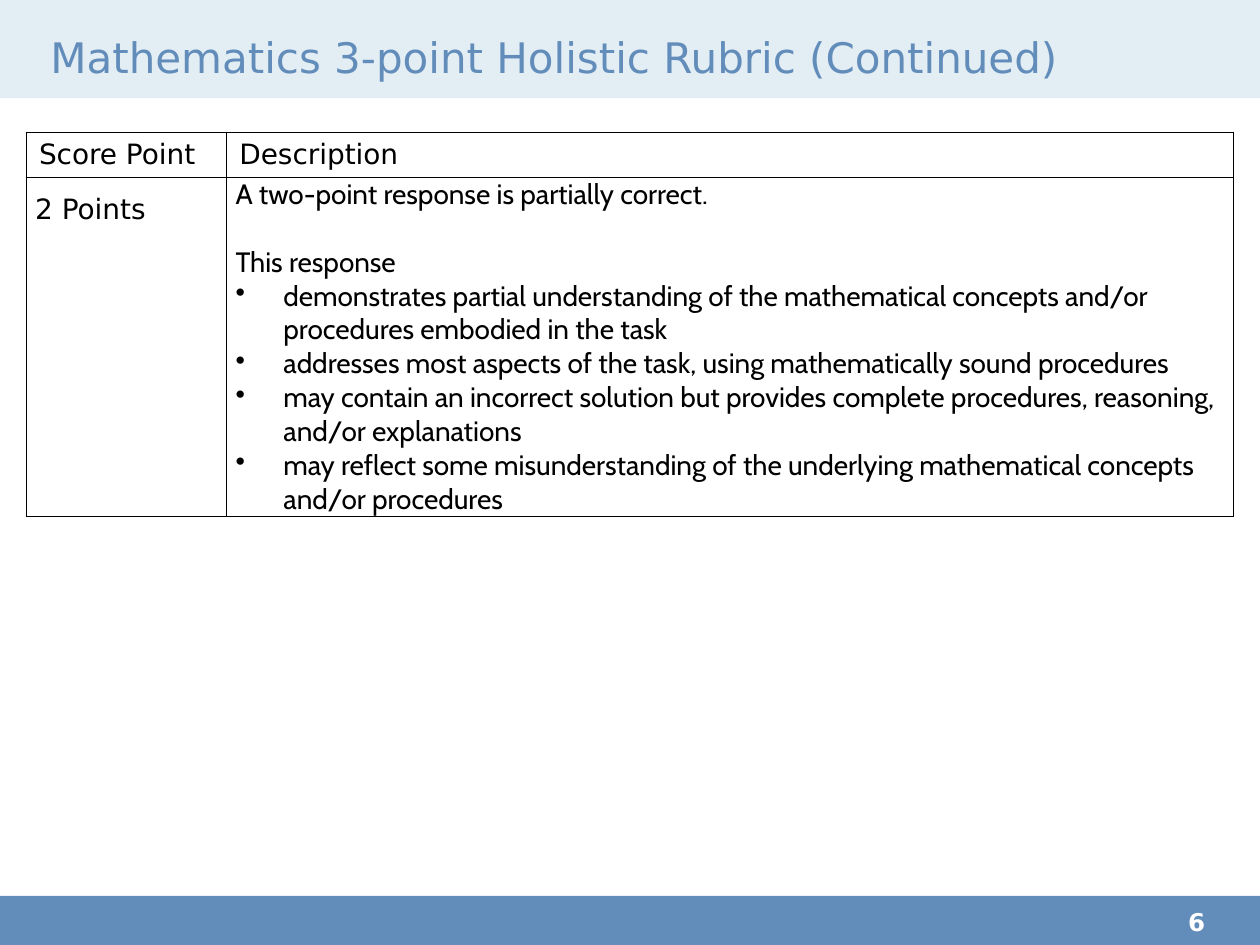
import pptx
import pptx.dml.color
import pptx.enum.shapes
import pptx.enum.text
import pptx.oxml.ns
import pptx.util
from dataclasses import dataclass
from lxml import etree

Inches, Pt = pptx.util.Inches, pptx.util.Pt
ANCHOR = pptx.enum.text.MSO_ANCHOR


@dataclass(frozen=True)
class Theme:
    blue: str = "628DBB"
    pale: str = "E3EDF4"
    white: str = "FFFFFF"
    black: str = "000000"
    head_font: str = "DejaVu Sans"
    body_font: str = "Cabin"
    title_size: int = 24
    table_size: int = 16
    number_size: int = 14


THEME = Theme()
INTRO = ["A two-point response is partially correct.", "This response"]
CRITERIA = [
    "demonstrates partial understanding of the mathematical concepts and/or "
    "procedures embodied in the task",
    "addresses most aspects of the task, using mathematically sound procedures",
    "may contain an incorrect solution but provides complete procedures, "
    "reasoning, and/or explanations",
    "may reflect some misunderstanding of the underlying mathematical concepts "
    "and/or procedures",
]


def rgb(color):
    return pptx.dml.color.RGBColor.from_string(color)


def add_xml(parent, tag, **attrs):
    return etree.SubElement(parent, pptx.oxml.ns.qn(tag), attrs)


def write(p, text, size=THEME.table_size, font=THEME.head_font,
          color=THEME.black, bold=False, bullet=False, before=0, spacing=1.0):
    """Put formatted text into a paragraph."""
    p.alignment = pptx.enum.text.PP_ALIGN.LEFT
    p.line_spacing, p.space_before = spacing, Pt(before)
    r = p.add_run()
    r.text = text
    r.font.size, r.font.name, r.font.bold = Pt(size), font, bold
    r.font.color.rgb = rgb(color)
    if bullet:
        pPr = p._p.get_or_add_pPr()
        pPr.set("marL", str(Inches(0.38)))
        pPr.set("indent", str(Inches(-0.38)))
        add_xml(pPr, "a:buChar", char="•")


def set_margins(box, left=0, top=0, right=0, bottom=0):
    box.margin_left, box.margin_top = Inches(left), Inches(top)
    box.margin_right, box.margin_bottom = Inches(right), Inches(bottom)


def add_band(s, x, y, w, h, color):
    sp = s.shapes.add_shape(pptx.enum.shapes.MSO_SHAPE.RECTANGLE, x, y, w, h)
    sp.shadow.inherit = False
    sp.fill.solid()
    sp.fill.fore_color.rgb = rgb(color)
    sp.line.fill.background()
    return sp


def add_header(s, x, y, w, h):
    # The band goes behind the title placeholder
    band = add_band(s, x, y, w, h, THEME.pale)
    s.shapes._spTree.insert(2, band._element)
    title = s.shapes.title
    title.left, title.top = x + Inches(0.4), y + Inches(0.23)
    title.width, title.height = w - Inches(1), Inches(0.49)
    tf = title.text_frame
    tf.auto_size = pptx.enum.text.MSO_AUTO_SIZE.NONE
    tf.vertical_anchor = ANCHOR.MIDDLE
    set_margins(tf, right=0.1, bottom=0.05)
    write(tf.paragraphs[0], "Mathematics 3-point Holistic Rubric (Continued)",
          size=THEME.title_size, color=THEME.blue)


def format_cell(cell):
    tcPr = cell._tc.get_or_add_tcPr()
    for side in ("a:lnL", "a:lnR", "a:lnT", "a:lnB"):
        ln = add_xml(tcPr, side, w=str(Pt(1)))
        add_xml(add_xml(ln, "a:solidFill"), "a:srgbClr", val=THEME.black)
    cell.fill.background()


def add_rubric(s, x, y, w, h):
    table = s.shapes.add_table(2, 2, x, y, w, h).table
    table.first_row = table.horz_banding = False
    table.columns[0].width = Inches(1.59)
    table.columns[1].width = w - Inches(1.59)
    table.rows[0].height = Inches(0.36)
    table.rows[1].height = h - Inches(0.36)
    for cell in table.iter_cells():
        format_cell(cell)

    # Heading row
    for cell, text in zip(table.rows[0].cells, ("Score Point", "Description")):
        set_margins(cell, 0.1, 0.05, 0.1, 0.05)
        cell.vertical_anchor = ANCHOR.BOTTOM
        write(cell.text_frame.paragraphs[0], text)

    # Score and its description
    score, description = table.rows[1].cells
    for cell in (score, description):
        set_margins(cell, left=0.07, right=0.07)
        cell.vertical_anchor = ANCHOR.TOP
    write(score.text_frame.paragraphs[0], "2 Points", spacing=1.5)
    tf = description.text_frame
    write(tf.paragraphs[0], INTRO[0], font=THEME.body_font)
    write(tf.add_paragraph(), INTRO[1], font=THEME.body_font, before=19.4)
    for text in CRITERIA:
        write(tf.add_paragraph(), text, font=THEME.body_font, bullet=True)


def add_footer(s, x, y, w, h):
    add_band(s, x, y, w, h, THEME.blue)
    number = s.shapes.add_textbox(x + Inches(9.43), y + Inches(0.09),
                                  Inches(0.57), Inches(0.3))
    tf = number.text_frame
    tf.word_wrap = True
    set_margins(tf)
    write(tf.paragraphs[0], "6", size=THEME.number_size, color=THEME.white,
          bold=True)


def main():
    prs = pptx.Presentation()
    prs.slide_width, prs.slide_height = Inches(10), Inches(7.5)
    s = prs.slides.add_slide(prs.slide_layouts[5])
    add_header(s, 0, 0, prs.slide_width, Inches(0.78))
    add_rubric(s, Inches(0.21), Inches(1.05), Inches(9.58), Inches(3.05))
    add_footer(s, 0, Inches(7.11), prs.slide_width, Inches(0.39))
    prs.save("out.pptx")


if __name__ == "__main__":
    main()
